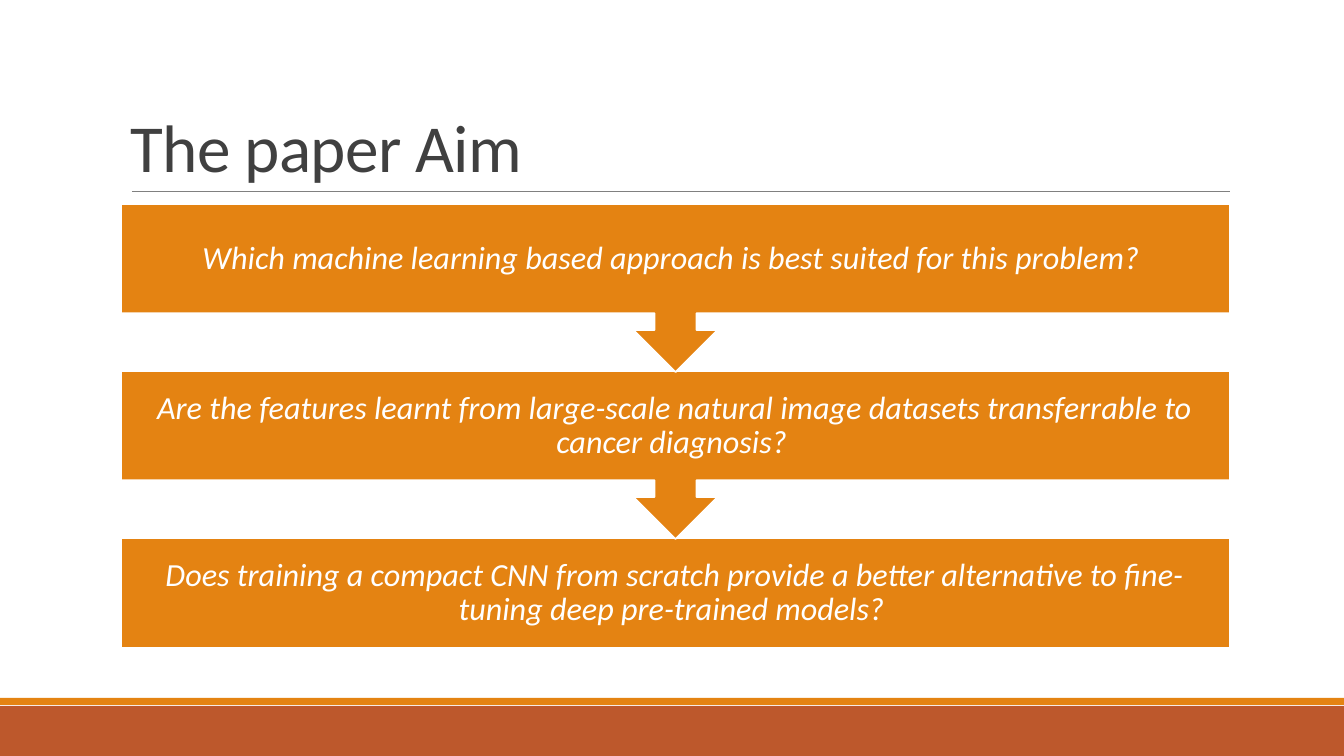
from lxml import etree
from pptx import Presentation
from pptx import util as u
from pptx.dml.color import RGBColor
from pptx.enum import shapes, text
from pptx.oxml.ns import qn

# Content
TITLE = "The paper Aim"
QUESTIONS = [
    "Which machine learning based approach is best suited for this problem? ",
    "Are the features learnt from large-scale natural image datasets transferrable to cancer diagnosis? ",
    "Does training a compact CNN from scratch provide a better alternative to fine-tuning deep pre-trained models? ",
]

ORANGE = RGBColor(0xE4, 0x83, 0x12)
RUST = RGBColor(0xBD, 0x58, 0x2C)
GREY = RGBColor(0x80, 0x80, 0x80)
DARK = RGBColor(0x40, 0x40, 0x40)
WHITE = RGBColor(0xFF, 0xFF, 0xFF)
FONT = "Calibri"

# Layout in px
SLIDE_W, SLIDE_H = 1344, 756
LEFT, WIDTH = 121, 1109
FIRST_TOP, PITCH = 204, 167
BOX_H, CALLOUT_H = 110, 168
INSET = 18


def px(n):
    return u.Emu(round(n * 914400 / 100.8))


def place(*lengths):
    return [px(n) for n in lengths]


def add_block(slide, kind, at, fill, outline=None):
    block = slide.shapes.add_shape(kind, *place(*at))
    block.shadow.inherit = False
    block.fill.solid()
    block.fill.fore_color.rgb = fill
    if outline is None:
        block.line.fill.background()
    else:
        block.line.color.rgb = outline
        block.line.width = u.Pt(1.25)
    return block


def add_text(slide, at, words, size, color, anchor, align, spacing):
    frame = slide.shapes.add_textbox(*place(*at)).text_frame
    frame.word_wrap = True
    frame.vertical_anchor = anchor
    line = frame.paragraphs[0]
    line.alignment = align
    line.line_spacing = spacing
    run = line.add_run()
    run.text = words
    run.font.name = FONT
    run.font.size = u.Pt(size)
    run.font.color.rgb = color
    return frame, run


def main():
    prs = Presentation()
    prs.slide_width, prs.slide_height = place(SLIDE_W, SLIDE_H)
    slide = prs.slides.add_slide(prs.slide_layouts[6])
    rect = shapes.MSO_SHAPE.RECTANGLE

    # Footer bands
    add_block(slide, rect, (0, 706, SLIDE_W, 50), RUST)
    add_block(slide, rect, (0, 698, SLIDE_W, 7), ORANGE)

    # Title and its rule
    rule = slide.shapes.add_connector(
        shapes.MSO_CONNECTOR.STRAIGHT, *place(132, 191, 1230, 191))
    rule.line.color.rgb = GREY
    rule.line.width = u.Pt(0.5)
    etree.SubElement(rule._element.spPr, qn("a:effectLst"))
    _, title = add_text(slide, (LEFT, 31, WIDTH, 160), TITLE, 48, DARK,
                        text.MSO_ANCHOR.BOTTOM, text.PP_ALIGN.LEFT, 0.85)
    title.font._element.set("spc", "-50")

    # Questions, last one first so that each arrow overlaps the next box
    last = len(QUESTIONS) - 1
    for i in range(last, -1, -1):
        top = FIRST_TOP + i * PITCH
        if i == last:
            add_block(slide, rect, (LEFT, top, WIDTH, BOX_H), ORANGE, WHITE)
        else:
            callout = add_block(slide, shapes.MSO_SHAPE.UP_ARROW_CALLOUT,
                                (LEFT, top, WIDTH, CALLOUT_H), ORANGE, WHITE)
            callout.rotation = 180
        frame, question = add_text(
            slide, (LEFT, top, WIDTH, BOX_H), QUESTIONS[i], 23, WHITE,
            text.MSO_ANCHOR.MIDDLE, text.PP_ALIGN.CENTER, 0.9)
        frame.margin_left = frame.margin_right = px(INSET)
        frame.margin_top = frame.margin_bottom = px(INSET)
        question.font.italic = True

    prs.save("out.pptx")


if __name__ == "__main__":
    main()
